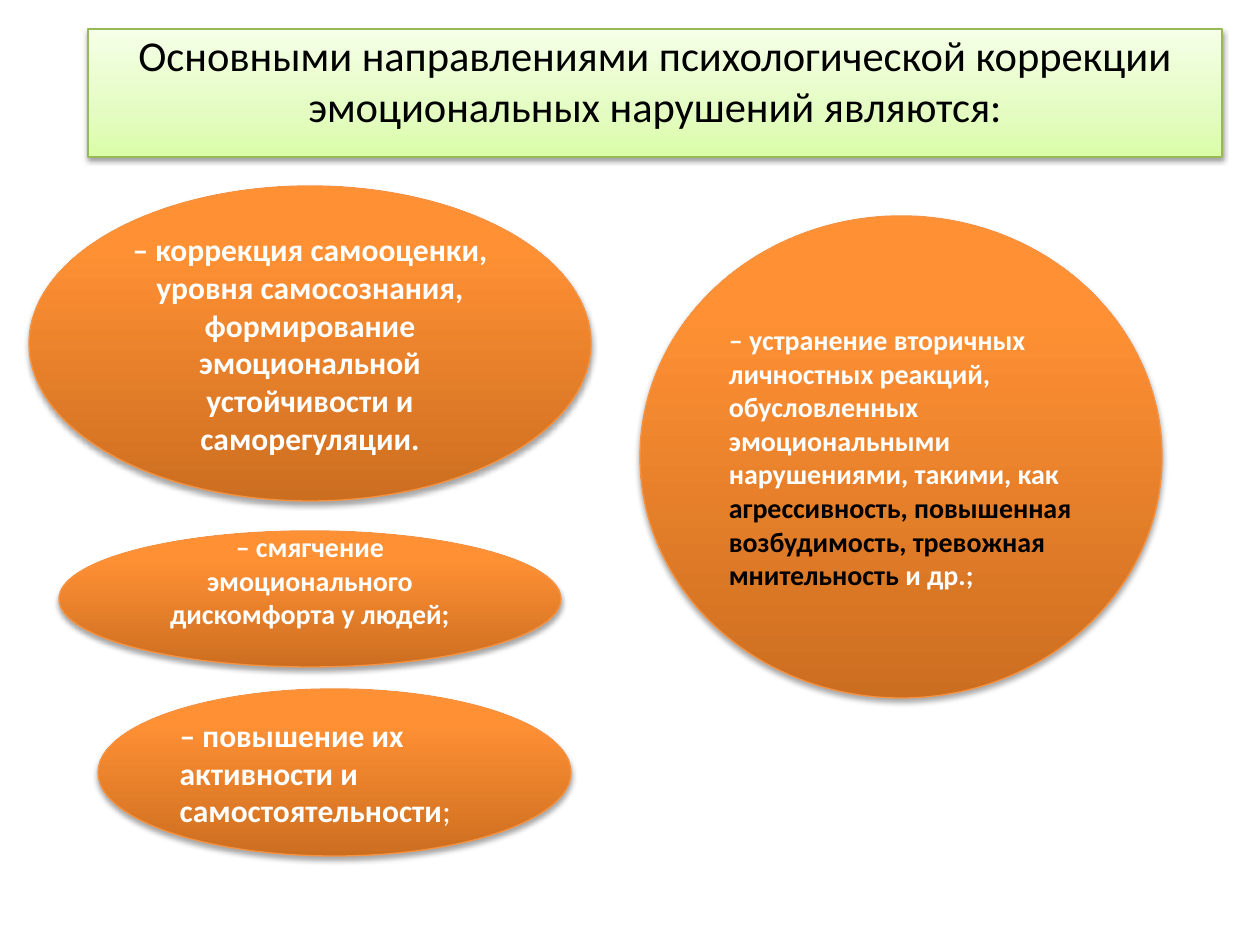
from copy import deepcopy

from lxml import etree
from pptx import Presentation
from pptx.dml.color import RGBColor
from pptx.enum.shapes import MSO_SHAPE
from pptx.enum.text import MSO_ANCHOR, MSO_AUTO_SIZE, PP_ALIGN
from pptx.oxml.ns import qn
from pptx.util import Pt

OVAL = MSO_SHAPE.OVAL
LEFT, CENTER = PP_ALIGN.LEFT, PP_ALIGN.CENTER
TOP, MIDDLE = MSO_ANCHOR.TOP, MSO_ANCHOR.MIDDLE
NO_AUTOFIT = MSO_AUTO_SIZE.NONE

FONT = "Calibri"
BLACK = RGBColor(0x00, 0x00, 0x00)
WHITE = RGBColor(0xFF, 0xFF, 0xFF)
GREEN_LINE = RGBColor(0x98, 0xB9, 0x55)
ORANGE_LINE = RGBColor(0xF6, 0x92, 0x40)
# Gradient stops run from the bottom edge to the top
GREEN_STOPS = [(0, RGBColor(0xDA, 0xFD, 0xA7)),
               (0.35, RGBColor(0xE4, 0xFC, 0xC2)),
               (1, RGBColor(0xF5, 0xFF, 0xE7))]
ORANGE_STOPS = [(0, RGBColor(0xCC, 0x6E, 0x20)),
                (0.8, RGBColor(0xFF, 0x90, 0x34)),
                (1, RGBColor(0xFF, 0x91, 0x36))]

TITLE = ("Основными направлениями психологической коррекции "
         "эмоциональных нарушений являются:")

# Ovals: place, text size, alignment, extra bottom inset, runs (text, colour, bold)
OVALS = [
    ((59, 531, 502, 136), 16, CENTER, 38,
     [("– смягчение эмоционального дискомфорта у людей;", WHITE, True)]),
    ((98, 689, 473, 167), 18, LEFT, 0,
     [("– повышение их активности и самостоятельности", WHITE, True),
      (";", WHITE, False)]),
    ((640, 216, 522, 482), 16, LEFT, 0,
     [("– устранение вторичных личностных реакций, обусловленных "
       "эмоциональными нарушениями, такими, как ", WHITE, True),
      ("агрессивность, повышенная возбудимость, тревожная мнительность ",
       BLACK, True),
      ("и др.;", WHITE, True)]),
    ((29, 186, 562, 315), 18, CENTER, 0,
     [("– коррекция самооценки, уровня самосознания, формирование "
       "эмоциональной устойчивости и саморегуляции.", WHITE, True)]),
]


def px(length):
    return round(length * 914400 / 126)


def add_shadow(shape, opacity, distance):
    effects = etree.SubElement(shape._element.spPr, qn("a:effectLst"))
    shadow = etree.SubElement(
        effects, qn("a:outerShdw"), blurRad=str(Pt(3.1)),
        dist=str(Pt(distance)), dir="5400000", rotWithShape="0")
    color = etree.SubElement(shadow, qn("a:srgbClr"), val=str(BLACK))
    etree.SubElement(color, qn("a:alpha"), val=str(opacity * 1000))


def style_shape(shape, stops, line_color, opacity, distance):
    shape.fill.gradient()
    shape.fill.gradient_angle = 90
    stop_list = shape._element.spPr.find(qn("a:gradFill")).find(qn("a:gsLst"))
    stop_list.append(deepcopy(stop_list[-1]))
    for stop, (position, color) in zip(shape.fill.gradient_stops, stops):
        stop.position = position
        stop.color.rgb = color
    shape.line.color.rgb = line_color
    shape.line.width = Pt(0.75)
    add_shadow(shape, opacity, distance)


def write_text(shape, runs, size, align, anchor):
    frame = shape.text_frame
    frame.word_wrap = True
    frame.auto_size = NO_AUTOFIT
    frame.vertical_anchor = anchor
    para = frame.paragraphs[0]
    para.alignment = align
    for text, color, bold in runs:
        span = para.add_run()
        span.text = text
        span.font.name = FONT
        span.font.size = Pt(size)
        span.font.bold = bold
        span.font.color.rgb = color


def format_title(page):
    title = page.shapes.title
    title.left, title.top, title.width, title.height = map(px, (88, 29, 1134, 128))
    style_shape(title, GREEN_STOPS, GREEN_LINE, 38, 1.6)
    write_text(title, [(TITLE, BLACK, False)], 24.3, CENTER, TOP)
    title.text_frame.margin_top = 0


def add_oval(page, place, size, align, extra_inset, runs):
    oval = page.shapes.add_shape(OVAL, *map(px, place))
    style_shape(oval, ORANGE_STOPS, ORANGE_LINE, 35, 1.8)
    write_text(oval, runs, size, align, MIDDLE)
    oval.text_frame.margin_bottom += px(extra_inset)


def main():
    deck = Presentation()
    deck.slide_width, deck.slide_height = px(1260), px(945)
    page = deck.slides.add_slide(deck.slide_layouts[5])
    format_title(page)
    for oval in OVALS:
        add_oval(page, *oval)
    deck.save("out.pptx")


if __name__ == "__main__":
    main()
